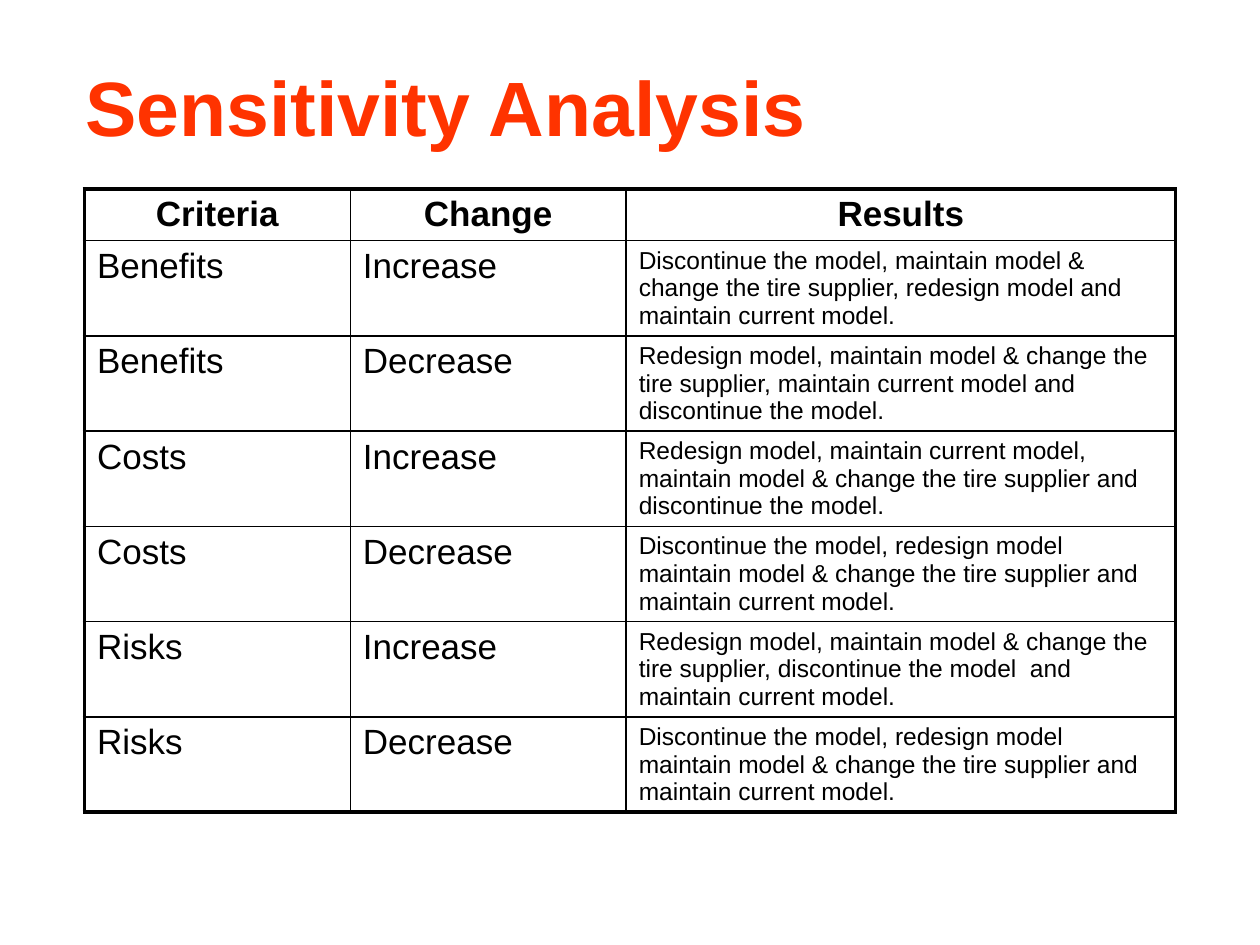
from lxml import etree
from pptx import Presentation
from pptx.dml.color import RGBColor
from pptx.enum.text import MSO_ANCHOR, PP_ALIGN
from pptx.oxml.ns import qn
from pptx.util import Inches, Pt

LEFT, CENTER = PP_ALIGN.LEFT, PP_ALIGN.CENTER
TOP, MIDDLE = MSO_ANCHOR.TOP, MSO_ANCHOR.MIDDLE

TITLE = "Sensitivity Analysis"
HEADINGS = ("Criteria", "Change", "Results")
FINDINGS = [
    ("Benefits", "Increase", "Discontinue the model, maintain model & change the tire supplier, redesign model and maintain current model."),
    ("Benefits", "Decrease", "Redesign model, maintain model & change the tire supplier, maintain current model and discontinue the model."),
    ("Costs", "Increase", "Redesign model, maintain current model, maintain model & change the tire supplier and discontinue the model."),
    ("Costs", "Decrease", "Discontinue the model, redesign model maintain model & change the tire supplier and maintain current model."),
    ("Risks", "Increase", "Redesign model, maintain model & change the tire supplier, discontinue the model  and maintain current model."),
    ("Risks", "Decrease", "Discontinue the model, redesign model maintain model & change the tire supplier and maintain current model."),
]
COLUMN_WIDTHS = (2.11, 2.19, 4.36)
HEADER_HEIGHT, ROW_HEIGHT = 0.4, 0.75
OUTER_LINE, INNER_LINE = 2.25, 1
BLACK, WHITE, ORANGE = "000000", "FFFFFF", "FF3300"


def color(value):
    """Turn a hex string into a colour."""
    return RGBColor.from_string(value)


def write(frame, text, size=20, ink=BLACK, bold=False, align=LEFT):
    """Put one formatted paragraph into a text frame."""
    frame.word_wrap = True
    para = frame.paragraphs[0]
    para.alignment = align
    para.space_before = Pt(0)
    span = para.add_run()
    span.text = text
    span.font.name = "Arial"
    span.font.size = Pt(size)
    span.font.bold = bold
    span.font.color.rgb = color(ink)


def add_border(cell, side, width):
    """Draw one black edge of a table cell."""
    properties = cell._tc.get_or_add_tcPr()
    line = etree.SubElement(properties, qn(f"a:ln{side}"), w=str(Pt(width)))
    fill = etree.SubElement(line, qn("a:solidFill"))
    etree.SubElement(fill, qn("a:srgbClr"), val=BLACK)


def add_title(page):
    """Format and fill the title placeholder."""
    title = page.shapes.title
    title.left, title.top = Inches(0.58), Inches(0.42)
    title.width, title.height = Inches(8.5), Inches(0.83)
    title.text_frame.vertical_anchor = MIDDLE
    write(title.text_frame, TITLE, size=44, ink=ORANGE, bold=True)


def add_findings(page):
    """Build the bordered table of findings."""
    rows = [HEADINGS, *FINDINGS]
    heights = [HEADER_HEIGHT] + [ROW_HEIGHT] * len(FINDINGS)
    last_row, last_column = len(rows) - 1, len(HEADINGS) - 1
    table = page.shapes.add_table(
        len(rows), len(HEADINGS), Inches(0.67), Inches(1.5),
        Inches(sum(COLUMN_WIDTHS)), Inches(sum(heights))).table
    table.first_row = table.horz_banding = False
    for column, width in zip(table.columns, COLUMN_WIDTHS):
        column.width = Inches(width)
    for r, (texts, height) in enumerate(zip(rows, heights)):
        table.rows[r].height = Inches(height)
        for c, text in enumerate(texts):
            cell = table.cell(r, c)
            edges = {"L": c == 0, "R": c == last_column, "T": r == 0, "B": r == last_row}
            for side, is_outer in edges.items():
                add_border(cell, side, OUTER_LINE if is_outer else INNER_LINE)
            cell.fill.solid()
            cell.fill.fore_color.rgb = color(WHITE)
            cell.vertical_anchor = TOP
            is_header = r == 0
            write(cell.text_frame, text, bold=is_header,
                  size=14 if c == last_column and not is_header else 20,
                  align=CENTER if is_header else LEFT)


def main():
    """Build and save the deck."""
    deck = Presentation()
    deck.slide_width, deck.slide_height = Inches(10), Inches(7.5)
    page = deck.slides.add_slide(deck.slide_layouts[5])
    page.background.fill.solid()
    page.background.fill.fore_color.rgb = color(WHITE)
    add_title(page)
    add_findings(page)
    deck.save("out.pptx")


if __name__ == "__main__":
    main()
